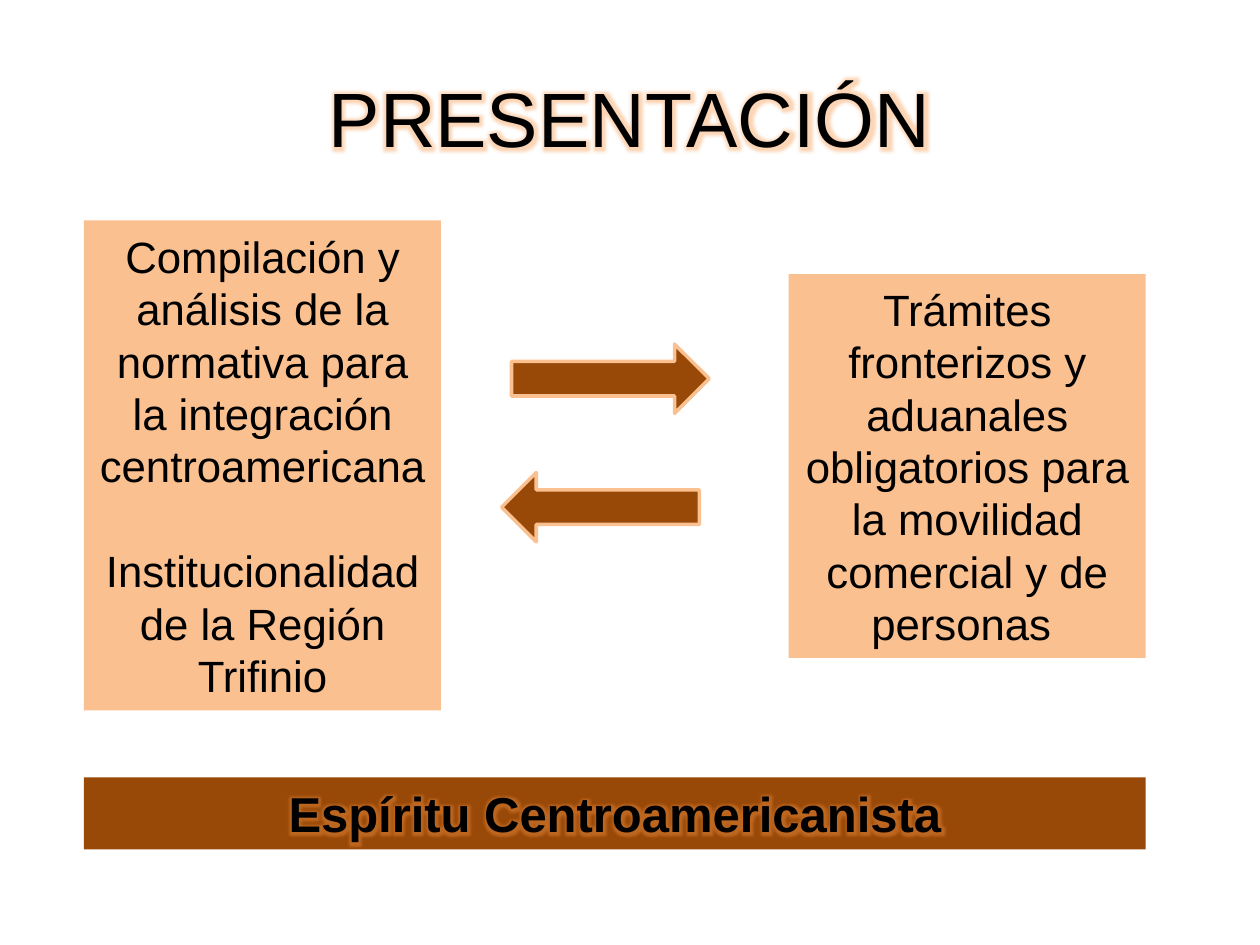
"""Build the PRESENTACIÓN slide: two text panels, opposing arrows and a closing banner."""
import pptx
import pptx.dml.color
import pptx.enum.shapes
import pptx.enum.text
import pptx.oxml
import pptx.oxml.ns
import pptx.util

Pt = pptx.util.Pt
SHAPES = pptx.enum.shapes.MSO_SHAPE
COLORS = {"ink": "000000", "peach": "FAC090", "brown": "984807", "glow": "F79646"}


def rgb(name):
    return pptx.dml.color.RGBColor.from_string(COLORS[name])


def write(frame, paragraphs, size, bold=False, pitch=None, gap=0, glow=False):
    frame.word_wrap = True
    frame.vertical_anchor = pptx.enum.text.MSO_ANCHOR.MIDDLE
    for index, text in enumerate(paragraphs):
        paragraph = frame.paragraphs[0] if index == 0 else frame.add_paragraph()
        paragraph.alignment = pptx.enum.text.PP_ALIGN.CENTER
        if pitch:
            paragraph.line_spacing = Pt(pitch)
        if index:
            paragraph.space_before = Pt(gap)
        run = paragraph.add_run()
        run.text = text
        for attribute, value in {"name": "Arial", "size": Pt(size), "bold": bold}.items():
            setattr(run.font, attribute, value)
        run.font.color.rgb = rgb("ink")
        if glow:
            effect = pptx.oxml.parse_xml(
                f'<a:effectLst {pptx.oxml.ns.nsdecls("a")}><a:glow rad="101600">'
                f'<a:srgbClr val="{COLORS["glow"]}"><a:alpha val="40000"/></a:srgbClr>'
                "</a:glow></a:effectLst>")
            run.font._element.insert(1, effect)


presentation = pptx.Presentation()
presentation.slide_width, presentation.slide_height = Pt(720), Pt(540)
slide = presentation.slides.add_slide(presentation.slide_layouts[5])

title = slide.shapes.title
for attribute, value in {"left": 36, "top": 21.6, "width": 648, "height": 90}.items():
    setattr(title, attribute, Pt(value))
write(title.text_frame, ["PRESENTACIÓN"], 44, glow=True)

panel_format = {"size": 25, "pitch": 30, "gap": 30}
panels = [
    ((48, 126, 204, 280), "peach", panel_format,
     ["Compilación y análisis de la normativa para la integración centroamericana ",
      "Institucionalidad de la Región Trifinio"]),
    ((450.7, 156.6, 204, 219.4), "peach", panel_format,
     ["Trámites fronterizos y aduanales obligatorios para la movilidad comercial y de personas "]),
    ((48, 444.2, 606.7, 41.2), "brown", {"size": 28, "bold": True, "glow": True},
     ["Espíritu Centroamericanista"]),
]
for box, color, text_format, paragraphs in panels:
    panel = slide.shapes.add_shape(SHAPES.RECTANGLE, *map(Pt, box))
    panel.shadow.inherit = False
    panel.fill.solid()
    panel.fill.fore_color.rgb = rgb(color)
    panel.line.fill.background()
    write(panel.text_frame, paragraphs, **text_format)

for left, top, rotation in [(292.3, 196.6, 0), (286.6, 270, 180)]:
    arrow = slide.shapes.add_shape(SHAPES.RIGHT_ARROW, Pt(left), Pt(top), Pt(113), Pt(39.6))
    arrow.rotation = rotation
    arrow.shadow.inherit = False
    arrow.fill.solid()
    arrow.fill.fore_color.rgb = rgb("brown")
    arrow.line.color.rgb = rgb("peach")
    arrow.line.width = Pt(2)

presentation.save("out.pptx")
